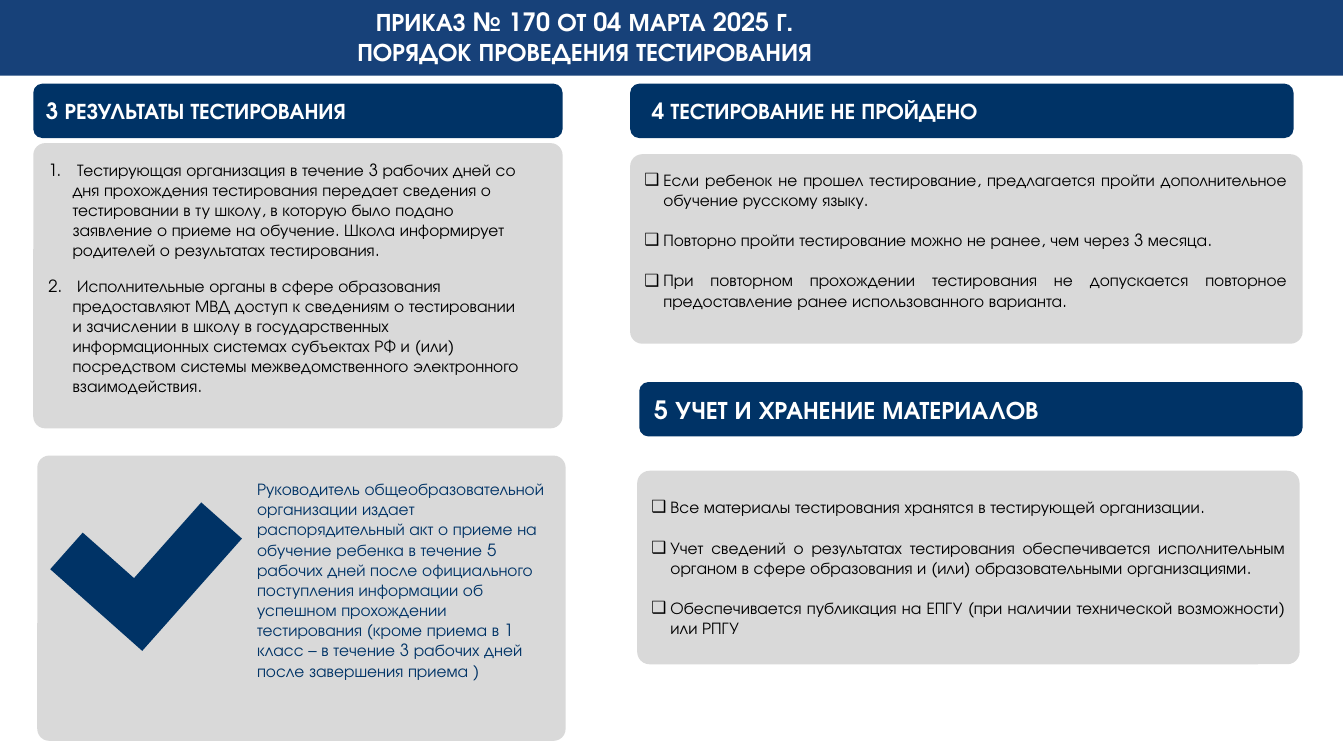
from dataclasses import dataclass

from lxml import etree
from pptx import Presentation
from pptx import util as u
from pptx.dml.color import RGBColor
from pptx.enum import shapes, text
from pptx.oxml.ns import qn

HUES = {"band": "174179", "navy": "003366", "grey": "D9D9D9",
        "white": "FFFFFF", "black": "000000"}
FONT = "TeX Gyre Adventor"
KIND = shapes.MSO_SHAPE


@dataclass
class Box:
    left: float
    top: float
    width: float
    height: float


@dataclass
class Head:
    box: Box
    words: str
    size: int
    inset: float


@dataclass
class Panel:
    box: Box
    round: float


@dataclass
class Body:
    idx: int
    box: Box
    items: list[str]
    mark: str = ""
    hang: float = 0
    gap: float = 0
    align: text.PP_ALIGN = text.PP_ALIGN.LEFT
    hue: str = "black"


HEADS = [
    Head(Box(0.33, 0.83, 5.25, 0.54), "3 РЕЗУЛЬТАТЫ ТЕСТИРОВАНИЯ", 16, 0.1),
    Head(Box(6.25, 0.83, 6.58, 0.54), "4 ТЕСТИРОВАНИЕ НЕ ПРОЙДЕНО", 16, 0.19),
    Head(Box(6.34, 3.79, 6.58, 0.54), "5 УЧЕТ И ХРАНЕНИЕ МАТЕРИАЛОВ", 18, 0.12),
]
PANELS = [
    Panel(Box(0.33, 1.42, 5.25, 2.83), 0.042),
    Panel(Box(0.37, 4.52, 5.24, 2.83), 0.042),
    Panel(Box(6.25, 1.53, 6.67, 1.88), 0.064),
    Panel(Box(6.32, 4.67, 6.57, 1.92), 0.064),
]
BODIES = [
    Body(1, Box(0.48, 1.58, 4.68, 2.5), [
        " Тестирующая организация в течение 3 рабочих дней со дня прохождения "
        "тестирования передает сведения о тестировании в ту школу, в которую "
        "было подано заявление о приеме на обучение. Школа информирует "
        "родителей о результатах тестирования.",
        " Исполнительные органы в сфере образования предоставляют МВД доступ "
        "к сведениям о тестировании и зачислении в школу в государственных "
        "информационных системах субъектах РФ и (или) посредством системы "
        "межведомственного электронного взаимодействия.",
    ], "1.", 0.24, 10.9),
    Body(3, Box(2.55, 4.75, 2.92, 2.1), [
        "Руководитель общеобразовательной организации издает распорядительный "
        "акт о приеме на обучение ребенка в течение 5 рабочих дней после "
        "официального поступления информации об успешном прохождении "
        "тестирования (кроме приема в 1 класс – в течение 3 рабочих дней "
        "после завершения приема )",
    ], hue="navy"),
    Body(2, Box(6.39, 1.68, 6.38, 1.6), [
        "Если ребенок не прошел тестирование, предлагается пройти "
        "дополнительное обучение русскому языку.",
        "Повторно пройти тестирование можно не ранее, чем через 3 месяца.",
        "При повторном прохождении тестирования не допускается повторное "
        "предоставление ранее использованного варианта.",
    ], "❑", 0.19, 14.4, text.PP_ALIGN.JUSTIFY),
    Body(4, Box(6.46, 4.93, 6.29, 1.6), [
        "Все материалы тестирования хранятся в тестирующей организации.",
        "Учет сведений о результатах тестирования обеспечивается "
        "исполнительным органом в сфере образования и (или) "
        "образовательными организациями.",
        "Обеспечивается публикация на ЕПГУ (при наличии технической "
        "возможности) или РПГУ",
    ], "❑", 0.19, 14.4, text.PP_ALIGN.JUSTIFY),
]


def tint(hue: str) -> RGBColor:
    return RGBColor.from_string(HUES[hue])


def draw(slide, kind, box: Box, hue: str, *bends: float):
    shape = slide.shapes.add_shape(
        kind, u.Inches(box.left), u.Inches(box.top),
        u.Inches(box.width), u.Inches(box.height))
    shape.shadow.inherit = False
    shape.fill.solid()
    shape.fill.fore_color.rgb = tint(hue)
    shape.line.fill.background()
    for i, bend in enumerate(bends):
        shape.adjustments[i] = bend
    return shape


def write(para, words: str, size: int, hue: str, bold: bool = False) -> None:
    run = para.add_run()
    run.text = words
    run.font.name = FONT
    run.font.size = u.Pt(size)
    run.font.bold = bold
    run.font.color.rgb = tint(hue)


def frame(shape, anchor, inset: float = 0):
    """Prepare the text area of a shape with a left inset only."""
    area = shape.text_frame
    area.word_wrap = True
    area.auto_size = text.MSO_AUTO_SIZE.NONE
    area.vertical_anchor = anchor
    area.margin_left = u.Inches(inset)
    area.margin_right = area.margin_top = area.margin_bottom = 0
    return area


def place(holder, box: Box) -> None:
    """Move a placeholder and lift it above the shapes drawn so far."""
    holder.left, holder.top = u.Inches(box.left), u.Inches(box.top)
    holder.width, holder.height = u.Inches(box.width), u.Inches(box.height)
    holder.element.getparent().append(holder.element)


def bullet(para, mark: str, hang: float) -> None:
    props = para._p.get_or_add_pPr()
    props.set("marL", str(u.Inches(hang)))
    props.set("indent", str(-u.Inches(hang)))
    if mark == "1.":
        etree.SubElement(props, qn("a:buAutoNum"), type="arabicPeriod")
    elif mark:
        etree.SubElement(props, qn("a:buChar"), char=mark)
    else:
        etree.SubElement(props, qn("a:buNone"))


def add_title(slide) -> None:
    draw(slide, KIND.RECTANGLE, Box(0, 0, 13.32, 0.75), "band")
    place(slide.shapes.title, Box(0.33, 0.04, 10.94, 0.64))
    para = frame(slide.shapes.title, text.MSO_ANCHOR.MIDDLE).paragraphs[0]
    para.alignment = text.PP_ALIGN.CENTER
    write(para, "ПРИКАЗ № 170 ОТ 04 МАРТА 2025 Г.", 18, "white", True)
    para.add_line_break()
    write(para, "ПОРЯДОК ПРОВЕДЕНИЯ ТЕСТИРОВАНИЯ", 18, "white", True)


def add_head(slide, head: Head) -> None:
    bar = draw(slide, KIND.ROUNDED_RECTANGLE, head.box, "navy", 0.167)
    para = frame(bar, text.MSO_ANCHOR.MIDDLE, head.inset).paragraphs[0]
    para.alignment = text.PP_ALIGN.LEFT
    write(para, head.words, head.size, "white", True)


def add_tick(slide) -> None:
    tick = draw(slide, KIND.CORNER, Box(0.84, 4.75, 1.22, 1.49), "navy",
                0.398, 0.443)
    tick.rotation = 41.6
    tick.element.spPr.find(qn("a:xfrm")).set("flipH", "1")


def add_body(slide, body: Body) -> None:
    holder = next(h for h in slide.placeholders
                  if h.placeholder_format.idx == body.idx)
    place(holder, body.box)
    area = frame(holder, text.MSO_ANCHOR.TOP)
    for i, item in enumerate(body.items):
        para = area.add_paragraph() if i else area.paragraphs[0]
        bullet(para, body.mark, body.hang)
        para.alignment = body.align
        para.space_before = u.Pt(body.gap if i else 0)
        write(para, item, 12, body.hue)


def main() -> None:
    deck = Presentation()
    deck.slide_width, deck.slide_height = u.Inches(13.33), u.Inches(7.5)
    slide = deck.slides.add_slide(deck.slide_layouts.get_by_name("Comparison"))
    add_title(slide)
    for head in HEADS:
        add_head(slide, head)
    for panel in PANELS:
        draw(slide, KIND.ROUNDED_RECTANGLE, panel.box, "grey", panel.round)
    add_tick(slide)
    for body in BODIES:
        add_body(slide, body)
    deck.save("out.pptx")


if __name__ == "__main__":
    main()
